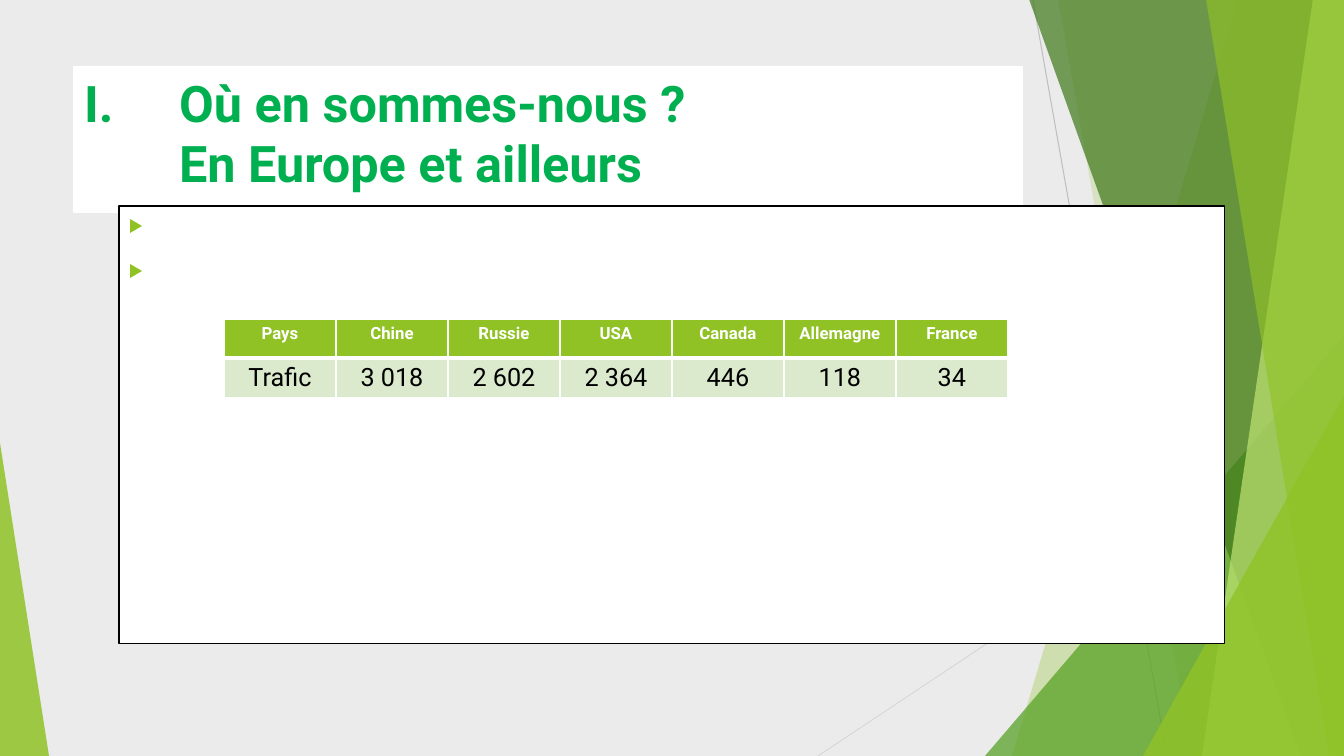
import dataclasses

import lxml.etree
import pptx
import pptx.dml.color
import pptx.enum.shapes
import pptx.enum.text
import pptx.oxml
import pptx.oxml.ns
import pptx.util

WIDTH, HEIGHT = 1344, 756
EMU_PER_PX = 12192000 / WIDTH
SHAPE = pptx.enum.shapes.MSO_SHAPE
ALIGN = pptx.enum.text.PP_ALIGN
ANCHOR = pptx.enum.text.MSO_ANCHOR


@dataclasses.dataclass(frozen=True)
class Theme:
    font: str = "Roboto"
    background: str = "EBEBEB"
    white: str = "FFFFFF"
    black: str = "000000"
    title: str = "00B050"
    lime: str = "90C226"
    leaf: str = "54A021"
    forest: str = "3F7819"
    pale: str = "C0E474"
    row: str = "DBE9CD"
    ray_dark: str = "BFBFBF"
    ray_light: str = "D9D9D9"
    title_size: int = 36
    header_size: int = 12
    value_size: int = 18
    hairline: float = 0.75


T = Theme()

RAYS = [
    ((1033, 0), (1167, HEIGHT), T.ray_dark),
    ((WIDTH, 406), (818, HEIGHT), T.ray_light),
]
# Each facet runs to the right edge: top-left x, bottom-left x, colour, opacity %
FACETS_BACK = [(1238, 1012, T.lime, 30), (1058, 1192, T.lime, 20)]
FACETS_FRONT = [
    (1029, 1301, T.forest, 70),
    (1313, 1202, T.pale, 70),
    (1206, 1329, T.lime, 65),
]
TRAFFIC = [
    ["Pays", "Chine", "Russie", "USA", "Canada", "Allemagne", "France"],
    ["Trafic", "3 018", "2 602", "2 364", "446", "118", "34"],
]


def px(n):
    return pptx.util.Emu(round(n * EMU_PER_PX))


def rgb(color):
    return pptx.dml.color.RGBColor.from_string(color)


def apply(obj, values):
    for name, value in values.items():
        setattr(obj, name, value)


def place(sp, left, top, width, height):
    box = {"left": left, "top": top, "width": width, "height": height}
    apply(sp, {name: px(n) for name, n in box.items()})


def style_font(font, size, color, bold):
    apply(font, {"name": T.font, "size": pptx.util.Pt(size), "bold": bold})
    font.color.rgb = rgb(color)


def paint(sp, fill, line=None, opacity=100):
    sp.fill.solid()
    sp.fill.fore_color.rgb = rgb(fill)
    if opacity < 100:
        color = sp._element.spPr.find(".//" + pptx.oxml.ns.qn("a:srgbClr"))
        alpha = lxml.etree.SubElement(color, pptx.oxml.ns.qn("a:alpha"))
        alpha.set("val", str(opacity * 1000))
    if line:
        sp.line.color.rgb = rgb(line)
        sp.line.width = pptx.util.Pt(T.hairline)
    else:
        sp.line.fill.background()


def add_preset(s, kind, box, fill, line=None, opacity=100, apex=None):
    sp = s.shapes.add_shape(kind, *map(px, box))
    sp.shadow.inherit = False
    if apex is not None:
        sp.adjustments[0] = apex
    paint(sp, fill, line, opacity)
    return sp


def add_ray(s, start, end, color):
    ray = s.shapes.add_connector(
        pptx.enum.shapes.MSO_CONNECTOR.STRAIGHT, *map(px, start + end))
    ray.line.color.rgb = rgb(color)
    ray.line.width = pptx.util.Pt(T.hairline)
    lxml.etree.SubElement(ray._element.spPr, pptx.oxml.ns.qn("a:effectLst"))


def add_facet(s, top_x, bottom_x, color, opacity):
    builder = s.shapes.build_freeform(top_x, -1, scale=EMU_PER_PX)
    builder.add_line_segments(
        [(WIDTH, -1), (WIDTH, HEIGHT), (bottom_x, HEIGHT)], close=True)
    sp = builder.convert_to_shape()
    sp.shadow.inherit = False
    paint(sp, color, opacity=opacity)


def add_backdrop(s):
    s.background.fill.solid()
    s.background.fill.fore_color.rgb = rgb(T.background)
    triangle = SHAPE.ISOSCELES_TRIANGLE
    for ray in RAYS:
        add_ray(s, *ray)
    for facet in FACETS_BACK:
        add_facet(s, *facet)
    add_preset(s, triangle, (985, 336, 359, 420), T.leaf, opacity=72, apex=1)
    for facet in FACETS_FRONT:
        add_facet(s, *facet)
    add_preset(s, triangle, (1143, 396, 201, 360), T.lime, opacity=80, apex=1)
    add_preset(s, triangle, (0, 443, 49, 313), T.lime, opacity=85, apex=0)


def set_title(s, lines):
    title = s.shapes.title
    place(title, 74, 67, 949, 146)
    paint(title, T.white, T.white)
    tf = title.text_frame
    apply(tf, {"word_wrap": True, "vertical_anchor": ANCHOR.TOP,
               "auto_size": pptx.enum.text.MSO_AUTO_SIZE.NONE})
    p = tf.paragraphs[0]
    p.alignment = ALIGN.LEFT
    for i, line in enumerate(lines):
        if i:
            p.add_line_break()
        r = p.add_run()
        r.text = line
        style_font(r.font, T.title_size, T.title, True)
    pPr = p._p.get_or_add_pPr()
    pPr.set("marL", str(px(95)))
    pPr.set("indent", str(-px(95)))
    number = lxml.etree.SubElement(pPr, pptx.oxml.ns.qn("a:buAutoNum"))
    number.set("type", "romanUcPeriod")


def add_panel(s):
    add_preset(s, SHAPE.RECTANGLE, (119, 206, 1106, 438), T.white, T.black)
    for top in (220, 265):
        marker = add_preset(
            s, SHAPE.ISOSCELES_TRIANGLE, (129, top, 14, 12), T.lime)
        marker.rotation = 90


def set_borders(cell, bottom):
    tcPr = cell._tc.get_or_add_tcPr()
    widths = {"lnL": 1, "lnR": 1, "lnT": 1, "lnB": bottom}
    for i, (side, width) in enumerate(widths.items()):
        tcPr.insert(i, pptx.oxml.parse_xml(
            f'<a:{side} {pptx.oxml.ns.nsdecls("a")} w="{pptx.util.Pt(width)}">'
            f'<a:solidFill><a:srgbClr val="{T.white}"/></a:solidFill>'
            f'</a:{side}>'))


def add_traffic_table(s, rows):
    n_rows, n_cols = len(rows), len(rows[0])
    box = (224, 319, 112 * n_cols, 39 * n_rows)
    table = s.shapes.add_table(n_rows, n_cols, *map(px, box)).table
    looks = [(T.lime, T.header_size, T.white, True, 3),
             (T.row, T.value_size, T.black, False, 1)]
    for i, (texts, look) in enumerate(zip(rows, looks)):
        fill, size, color, bold, bottom = look
        for j, text in enumerate(texts):
            cell = table.cell(i, j)
            cell.fill.solid()
            cell.fill.fore_color.rgb = rgb(fill)
            set_borders(cell, bottom)
            p = cell.text_frame.paragraphs[0]
            p.alignment = ALIGN.CENTER
            r = p.add_run()
            r.text = text
            style_font(r.font, size, color, bold)


def main():
    prs = pptx.Presentation()
    apply(prs, {"slide_width": px(WIDTH), "slide_height": px(HEIGHT)})
    s = prs.slides.add_slide(prs.slide_layouts.get_by_name("Title Only"))
    add_backdrop(s)
    set_title(s, ["Où en sommes-nous ?", "En Europe et ailleurs"])
    add_panel(s)
    add_traffic_table(s, TRAFFIC)
    prs.save("out.pptx")


if __name__ == "__main__":
    main()
